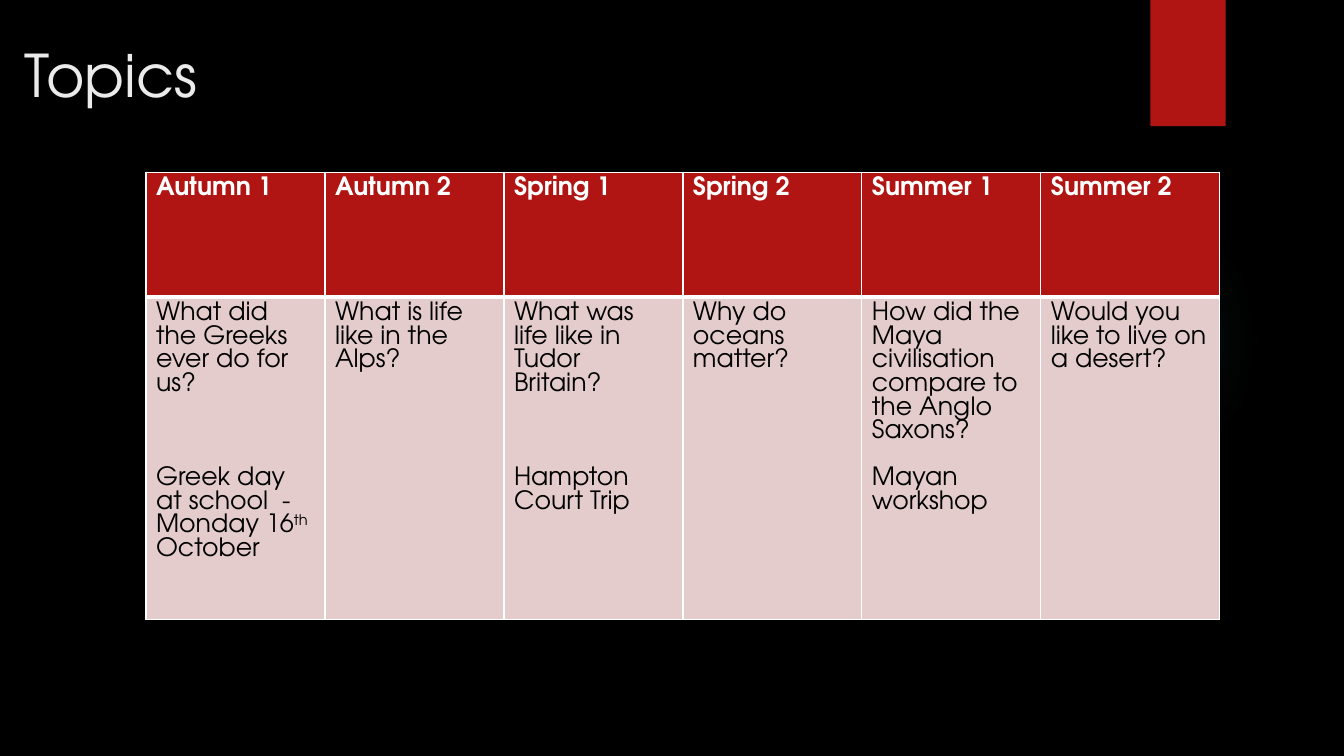
from dataclasses import dataclass

from lxml import etree
from pptx import Presentation
from pptx.dml.color import RGBColor
from pptx.enum.shapes import MSO_SHAPE as Shape
from pptx.enum.text import MSO_ANCHOR as Anchor
from pptx.oxml.ns import qn
from pptx.util import Cm, Pt

FONT = "TeX Gyre Adventor"
BLACK, WHITE, TITLE_GREY = "000000", "FFFFFF", "EBEBEB"
RED, PINK, GLOW = "B01513", "E4CCCC", "50B9C1"
LINE_PT = 16.8  # height of one line of table text


@dataclass
class Piece:
    text: str
    raised: bool = False


@dataclass
class Topic:
    term: str
    question: str
    event: tuple[Piece, ...] = ()
    gap_lines: int = 3


TOPICS = [
    Topic("Autumn 1", "What did the Greeks ever do for us?",
          (Piece("Greek day at school  - Monday 16"), Piece("th ", True), Piece("October"))),
    Topic("Autumn 2", "What is life like in the Alps?"),
    Topic("Spring 1", "What was life like in Tudor Britain?", (Piece("Hampton Court Trip"),)),
    Topic("Spring 2", "Why do oceans matter?"),
    Topic("Summer 1", "How did the Maya civilisation compare to the Anglo Saxons?",
          (Piece("Mayan workshop"),), gap_lines=1),
    Topic("Summer 2", "Would you like to live on a desert?"),
]


def rgb(value: str) -> RGBColor:
    return RGBColor.from_string(value)


def add_piece(paragraph, piece: Piece, size: float, color: str, bold: bool = False) -> None:
    run = paragraph.add_run()
    run.text = piece.text
    run.font.name, run.font.size, run.font.bold = FONT, Pt(size), bold
    run.font.color.rgb = rgb(color)
    if piece.raised:
        run.font._element.set("baseline", "30000")


def add_plain_shape(slide, kind, left: float, top: float, width: float, height: float):
    shape = slide.shapes.add_shape(kind, Cm(left), Cm(top), Cm(width), Cm(height))
    shape.shadow.inherit = False
    shape.line.fill.background()
    return shape


def add_glow(slide) -> None:
    glow = add_plain_shape(slide, Shape.OVAL, 23.9, 4.65, 7.82, 7.82)
    glow.fill.gradient()
    gradient = glow._element.spPr.find(qn("a:gradFill"))
    for child in list(gradient):
        gradient.remove(child)
    stops = etree.SubElement(gradient, qn("a:gsLst"))
    for position, opacity in ((0, 7), (36, 6), (69, 0)):
        stop = etree.SubElement(stops, qn("a:gs"), pos=str(position * 1000))
        color = etree.SubElement(stop, qn("a:srgbClr"), val=GLOW)
        etree.SubElement(color, qn("a:alpha"), val=str(opacity * 1000))
    circle = etree.SubElement(gradient, qn("a:path"), path="circle")
    etree.SubElement(circle, qn("a:fillToRect"), l="50000", t="50000", r="50000", b="50000")


def add_title(slide) -> None:
    title = slide.shapes.add_textbox(Cm(0.36), Cm(0.43), Cm(26.14), Cm(3.89)).text_frame
    title.word_wrap = True
    title.vertical_anchor = Anchor.TOP
    title.margin_top = Cm(0.54)
    add_piece(title.paragraphs[0], Piece("Topics"), 42, TITLE_GREY)


def style_cell(cell, fill: str, top_pt: float, bottom_pt: float) -> None:
    properties = cell._tc.get_or_add_tcPr()
    for side, width in (("L", 1), ("R", 1), ("T", top_pt), ("B", bottom_pt)):
        border = etree.SubElement(properties, qn(f"a:ln{side}"), w=str(Pt(width)))
        line_fill = etree.SubElement(border, qn("a:solidFill"))
        etree.SubElement(line_fill, qn("a:srgbClr"), val=WHITE)
    cell.fill.solid()
    cell.fill.fore_color.rgb = rgb(fill)


def add_topic_table(slide) -> None:
    column_width, row_heights = 4.51, (3.15, 6.76)
    table = slide.shapes.add_table(
        2, len(TOPICS), Cm(3.68), Cm(4.34),
        Cm(column_width * len(TOPICS)), Cm(sum(row_heights))).table
    table.horz_banding = False
    for row, height in zip(table.rows, row_heights):
        row.height = Cm(height)

    for index, topic in enumerate(TOPICS):
        table.columns[index].width = Cm(column_width)
        heading, body = table.cell(0, index), table.cell(1, index)
        style_cell(heading, RED, 1, 3)
        style_cell(body, PINK, 3, 1)
        add_piece(heading.text_frame.paragraphs[0], Piece(topic.term), 18, WHITE, True)
        add_piece(body.text_frame.paragraphs[0], Piece(topic.question), 18, BLACK)
        if topic.event:
            event = body.text_frame.add_paragraph()
            event.space_before = Pt(LINE_PT * topic.gap_lines)
            for piece in topic.event:
                add_piece(event, piece, 18, BLACK)


def main() -> None:
    deck = Presentation()
    deck.slide_width, deck.slide_height = Cm(33.87), Cm(19.05)
    slide = deck.slides.add_slide(deck.slide_layouts[6])
    slide.background.fill.solid()
    slide.background.fill.fore_color.rgb = rgb(BLACK)

    # Backdrop: faint glow and red tab
    add_glow(slide)
    tab = add_plain_shape(slide, Shape.RECTANGLE, 28.99, 0, 1.9, 3.18)
    tab.fill.solid()
    tab.fill.fore_color.rgb = rgb(RED)

    # Content
    add_title(slide)
    add_topic_table(slide)
    deck.save("out.pptx")


if __name__ == "__main__":
    main()
